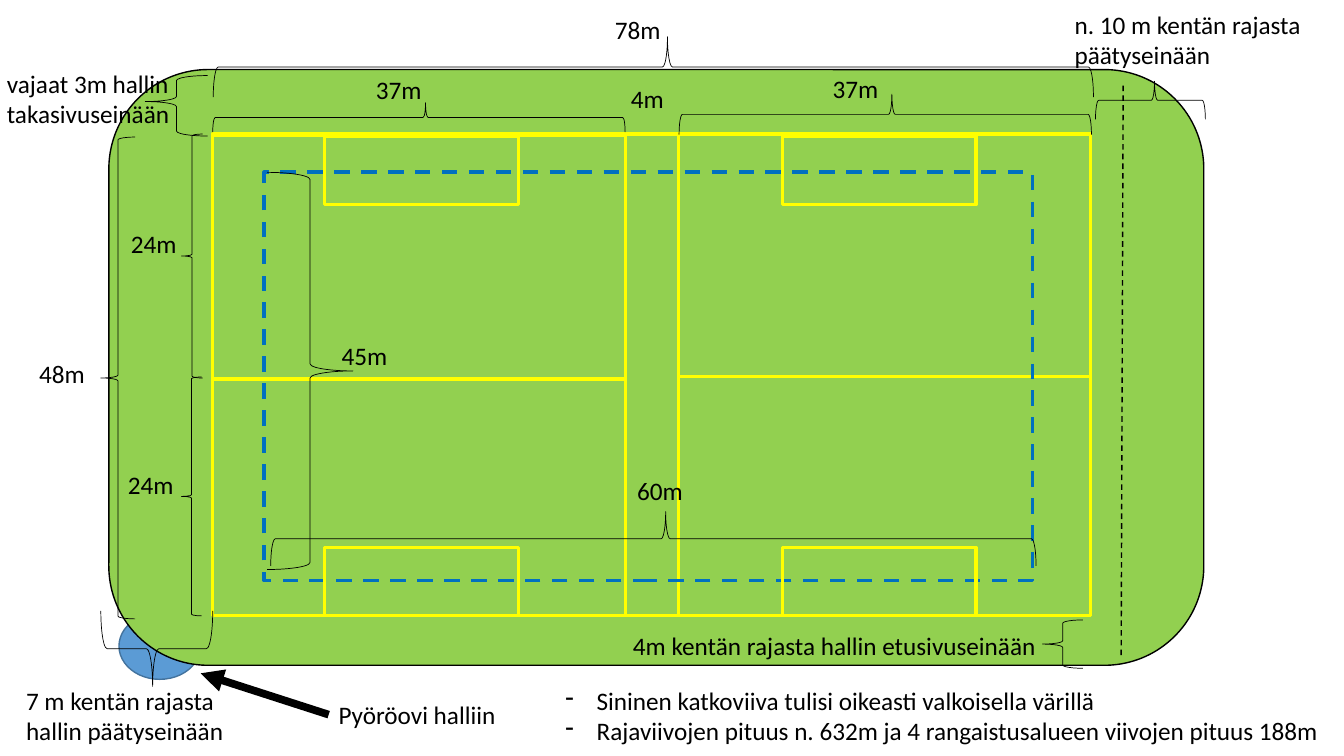
"""Build a slide with the measured plan of two football pitches in a hall."""
from typing import NamedTuple, Optional

from lxml import etree
from pptx import Presentation
from pptx import util as u
from pptx.dml.color import RGBColor
from pptx.enum import dml, shapes, text
from pptx.oxml import ns

COLORS = {"grass": "92D050", "door": "5B9BD5", "door_edge": "43739E",
          "paint": "FFFF00", "dashed": "0070C0", "ink": "000000"}
FONT = "Calibri"
KIND = shapes.MSO_SHAPE


class Box(NamedTuple):
    left: float
    top: float
    width: float
    height: float


class Brace(NamedTuple):
    box: Box
    rotation: int = 0
    tip: float = 0.5


class Label(NamedTuple):
    wording: str
    box: Box
    wrap: bool = True


FIELD = Box(2.11, 1.33, 8.71, 4.78)
PITCH_WIDTH = 4.09
PITCH_LEFTS = (FIELD.left, FIELD.left + FIELD.width - PITCH_WIDTH)
UPPER_HALVES = (Box(PITCH_LEFTS[0], 1.34, PITCH_WIDTH, 2.42),
                Box(PITCH_LEFTS[1], 1.33, PITCH_WIDTH, 2.41))
PENALTY_AREAS = [Box(left, top, 1.92, 0.68)
                 for left in (3.22, 7.76) for top in (1.35, 5.43)]
PAINTED = [FIELD,
           *(Box(left, FIELD.top, PITCH_WIDTH, FIELD.height) for left in PITCH_LEFTS),
           *UPPER_HALVES]

BRACES = [
    Brace(Box(1, 1.36, 0.34, 4.78)),
    Brace(Box(1.8, 1.33, 0.21, 2.42)),
    Brace(Box(1.8, 3.74, 0.2, 2.37)),
    Brace(Box(10.34, 6.15, 0.4, 0.48)),
    Brace(Box(1.44, 0.75, 0.62, 0.6), tip=0.43),
    Brace(Box(2.65, 1.71, 0.85, 3.94), 180),
    Brace(Box(8.58, -0.91, 0.4, 4.09), 90, 0.484),
    Brace(Box(4.01, -0.88, 0.29, 4.09), 90, 0.484),
    Brace(Box(6.21, 1.55, 0.54, 7.59), 90, 0.484),
    Brace(Box(6.18, -3.7, 0.6, 8.73), 90, 0.484),
    Brace(Box(11.22, 0.45, 0.38, 1.09), 90, 0.463),
    Brace(Box(1.18, 5.88, 0.75, 1.11), 270, 0.463),
]

LABELS = [
    Label("37m", Box(3.63, 0.69, 0.66, 0.4), False),
    Label("37m", Box(8.16, 0.68, 0.66, 0.4), False),
    Label("4m", Box(6.16, 0.78, 0.53, 0.4), False),
    Label("24m", Box(1.2, 2.22, 0.66, 0.4), False),
    Label("24m", Box(1.17, 4.61, 0.74, 0.4)),
    Label("48m", Box(0.29, 3.51, 0.95, 0.4)),
    Label("60m", Box(6.22, 4.67, 0.66, 0.4), False),
    Label("45m", Box(3.29, 3.33, 0.81, 0.4)),
    Label("78m", Box(6, 0.09, 0.95, 0.4)),
    Label("4m kentän rajasta hallin etusivuseinään", Box(6.18, 6.2, 4.36, 0.4)),
    Label("n. 10 m kentän rajasta päätyseinään", Box(10.56, 0.04, 2.7, 0.71)),
    Label("7 m kentän rajasta hallin päätyseinään", Box(0.16, 6.75, 2.37, 0.71)),
    Label("vajaat 3m hallin takasivuseinään", Box(-0.03, 0.63, 1.94, 1.01)),
]
DOOR_LABEL = Label("Pyöröovi halliin", Box(3.26, 6.89, 2.37, 0.4))
NOTES = Label("Sininen katkoviiva tulisi oikeasti valkoisella värillä\n"
              "Rajaviivojen pituus n. 632m ja 4 rangaistusalueen viivojen pituus 188m",
              Box(5.51, 6.75, 7.8, 0.71))


def rgb(name: str) -> RGBColor:
    """Return the named colour."""
    return RGBColor.from_string(COLORS[name])


def inches(box: Box) -> list:
    """Return the box as lengths."""
    return [u.Inches(value) for value in box]


def add_outline(slide, kind, box: Box, color: str, weight: float,
                fill: Optional[str] = None, dashed: bool = False):
    """Draw a preset shape with a line and an optional fill."""
    outline = slide.shapes.add_shape(kind, *inches(box))
    outline.shadow.inherit = False
    if fill:
        outline.fill.solid()
        outline.fill.fore_color.rgb = rgb(fill)
    else:
        outline.fill.background()
    outline.line.color.rgb = rgb(color)
    outline.line.width = u.Pt(weight)
    if dashed:
        outline.line.dash_style = dml.MSO_LINE.DASH
    return outline


def add_brace(slide, brace: Brace) -> None:
    """Draw a measuring brace."""
    measure = add_outline(slide, KIND.LEFT_BRACE, brace.box, "ink", 0.5)
    measure.adjustments[0] = 0.083
    measure.adjustments[1] = brace.tip
    measure.rotation = brace.rotation


def add_text(slide, label: Label, *, size: float = 18, color: str = "ink",
             bullet: Optional[str] = None):
    """Write a label, one paragraph a line, with optional bullets."""
    holder = slide.shapes.add_textbox(*inches(label.box))
    frame = holder.text_frame
    frame.word_wrap = label.wrap
    frame.auto_size = text.MSO_AUTO_SIZE.SHAPE_TO_FIT_TEXT
    frame.text = label.wording
    for paragraph in frame.paragraphs:
        if bullet:
            properties = paragraph._p.get_or_add_pPr()
            indent = u.Inches(0.31)
            properties.set("marL", str(indent))
            properties.set("indent", str(-indent))
            etree.SubElement(properties, ns.qn("a:buChar")).set("char", bullet)
        paragraph.font.name = FONT
        paragraph.font.size = u.Pt(size)
        paragraph.font.color.rgb = rgb(color)
    return holder


def add_line(slide, start: tuple, end: tuple, weight: float):
    """Draw a straight black line."""
    line = slide.shapes.add_connector(
        shapes.MSO_CONNECTOR.STRAIGHT, *(u.Inches(value) for value in start + end))
    line.line.color.rgb = rgb("ink")
    line.line.width = u.Pt(weight)
    etree.SubElement(line._element.spPr, ns.qn("a:effectLst"))
    return line


def main() -> None:
    """Build and save the slide."""
    deck = Presentation()
    deck.slide_width, deck.slide_height = u.Inches(13.33), u.Inches(7.5)
    slide = deck.slides.add_slide(deck.slide_layouts[6])

    add_outline(slide, KIND.OVAL, Box(1.18, 6.08, 0.81, 0.66), "door_edge", 1, "door")
    add_outline(slide, KIND.ROUNDED_RECTANGLE, Box(1.08, 0.69, 10.86, 5.91),
                "ink", 1, "grass")
    for area in PAINTED:
        add_outline(slide, KIND.RECTANGLE, area, "paint", 2.25)
    add_outline(slide, KIND.RECTANGLE, Box(2.62, 1.71, 7.62, 4.05),
                "dashed", 2.75, dashed=True)
    for area in PENALTY_AREAS:
        add_outline(slide, KIND.RECTANGLE, area, "paint", 2.25)
    for brace in BRACES:
        add_brace(slide, brace)
    for label in LABELS:
        add_text(slide, label)
    add_text(slide, NOTES, bullet="-")

    end_boundary = add_line(slide, (11.14, 0.85), (11.12, 6.53), 1)
    end_boundary.line.dash_style = dml.MSO_LINE.DASH
    door_caption = add_text(slide, DOOR_LABEL)
    door_arrow = add_line(slide, (3.26, 7.09), (1.99, 6.68), 5.5)
    door_arrow.begin_connect(door_caption, 1)
    etree.SubElement(door_arrow.line._get_or_add_ln(),
                     ns.qn("a:tailEnd")).set("type", "triangle")

    deck.save("out.pptx")


if __name__ == "__main__":
    main()
